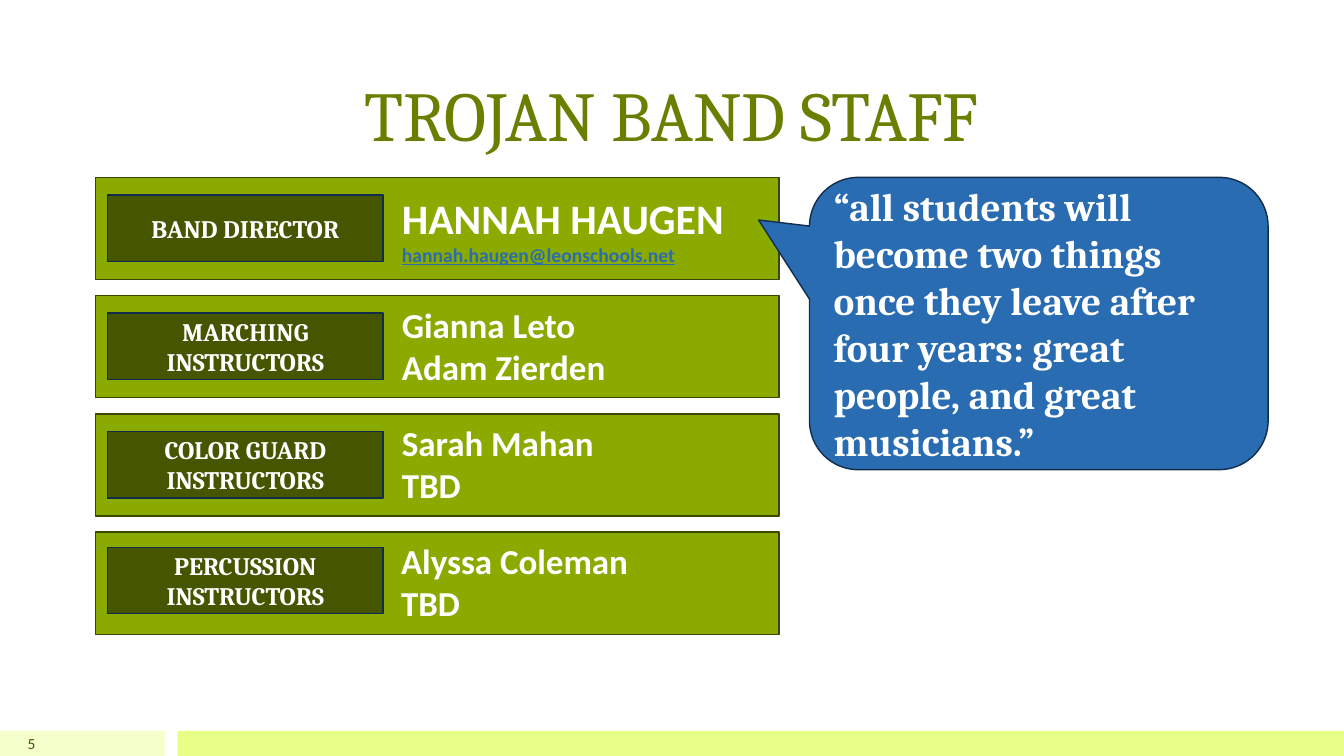
from pptx import Presentation
from pptx.dml.color import RGBColor
from pptx.enum.shapes import MSO_SHAPE as Shape
from pptx.enum.text import MSO_ANCHOR as Anchor, MSO_AUTO_SIZE as AutoSize, PP_ALIGN as Align
from pptx.util import Pt

WHITE, LIME, DARK_GREEN = "FFFFFF", "8BAA00", "455500"
BLUE, NAVY = "2A6CB2", "112D4B"
HEADING_FONT, BODY_FONT = "Cambria", "Calibri"

ROW_TOP, ROW_PITCH, ROW_HEIGHT = 126.7, 84.48, 73
EMAIL = "hannah.haugen@leonschools.net"

# Role, lines of (text, size, colour, underline), badge offset, names left and offset
STAFF = [
    ("BAND DIRECTOR",
     [("HANNAH HAUGEN", 30, WHITE, False), (EMAIL, 14, BLUE, True)], 12.5, 280, 7.2),
    ("MARCHING INSTRUCTORS",
     [("Gianna Leto", 25, WHITE, False), ("Adam Zierden", 25, WHITE, False)], 12.5, 280, 2),
    ("COLOR GUARD INSTRUCTORS",
     [("Sarah Mahan", 25, WHITE, False), ("TBD", 25, WHITE, False)], 12.5, 280, 2),
    ("PERCUSSION INSTRUCTORS",
     [("Alyssa Coleman", 25, WHITE, False), ("TBD", 25, WHITE, False)], 10.8, 279.4, 2),
]


def color(hex_string):
    return RGBColor.from_string(hex_string)


def add_box(slide, left, top, width, height, fill, line=None, kind=Shape.RECTANGLE):
    shape = slide.shapes.add_shape(kind, Pt(left), Pt(top), Pt(width), Pt(height))
    shape.shadow.inherit = False
    shape.fill.solid()
    shape.fill.fore_color.rgb = color(fill)
    if line:
        shape.line.color.rgb = color(line)
        shape.line.width = Pt(1)
    else:
        shape.line.fill.background()
    return shape


def add_text_box(slide, left, top, width, height):
    return slide.shapes.add_textbox(Pt(left), Pt(top), Pt(width), Pt(height))


def write(shape, lines, font_name, bold=True, align=Align.LEFT, anchor=Anchor.MIDDLE):
    frame = shape.text_frame
    frame.word_wrap = True
    frame.vertical_anchor = anchor
    for index, (text, size, text_color, underline) in enumerate(lines):
        paragraph = frame.add_paragraph() if index else frame.paragraphs[0]
        paragraph.alignment = align
        run = paragraph.add_run()
        run.text = text
        font = run.font
        font.name = font_name
        font.size = Pt(size)
        font.bold = bold
        font.underline = underline
        font.color.rgb = color(text_color)


def add_staff_row(slide, top, role, lines, badge_offset, names_left, names_offset):
    add_box(slide, 68.2, top, 488.2, ROW_HEIGHT, LIME, "3A4700")

    badge = add_box(slide, 77, top + badge_offset, 196.6, 47.5, DARK_GREEN, NAVY)
    write(badge, [(role, 18, WHITE, False)], HEADING_FONT, align=Align.CENTER)

    names = add_text_box(slide, names_left, top + names_offset, 276.5, 67.7)
    write(names, lines, BODY_FONT, anchor=Anchor.TOP)
    names.text_frame.auto_size = AutoSize.SHAPE_TO_FIT_TEXT


def add_quote(slide, text):
    callout = add_box(slide, 578.2, ROW_TOP, 327.6, 208.8, BLUE, NAVY,
                      Shape.ROUNDED_RECTANGULAR_CALLOUT)
    for index, value in enumerate((-0.611, -0.354, 0.167)):
        callout.adjustments[index] = value
    write(callout, [(text, 28, WHITE, False)], HEADING_FONT)


def main():
    presentation = Presentation()
    presentation.slide_width, presentation.slide_height = Pt(960), Pt(540)
    slide = presentation.slides.add_slide(presentation.slide_layouts[6])

    # Footer bars and slide number
    add_box(slide, 0, 522, 118, 18, "F4FFCB")
    add_box(slide, 126.7, 522, 833.3, 18, "E8FF87")
    number = add_text_box(slide, 0, 522, 32.4, 18)
    write(number, [("5", 11, DARK_GREEN, False)], BODY_FONT, bold=False, align=Align.RIGHT)

    # Title
    title = add_text_box(slide, 110.9, 21.6, 738, 92.9)
    write(title, [("TROJAN BAND STAFF", 50, "687F00", False)], HEADING_FONT,
          bold=False, align=Align.CENTER, anchor=Anchor.BOTTOM)

    # Staff rows
    for index, member in enumerate(STAFF):
        add_staff_row(slide, ROW_TOP + index * ROW_PITCH, *member)

    # Director's quote
    add_quote(slide, "“all students will become two things once they leave after "
                     "four years: great people, and great musicians.”")

    presentation.save("out.pptx")


if __name__ == "__main__":
    main()
